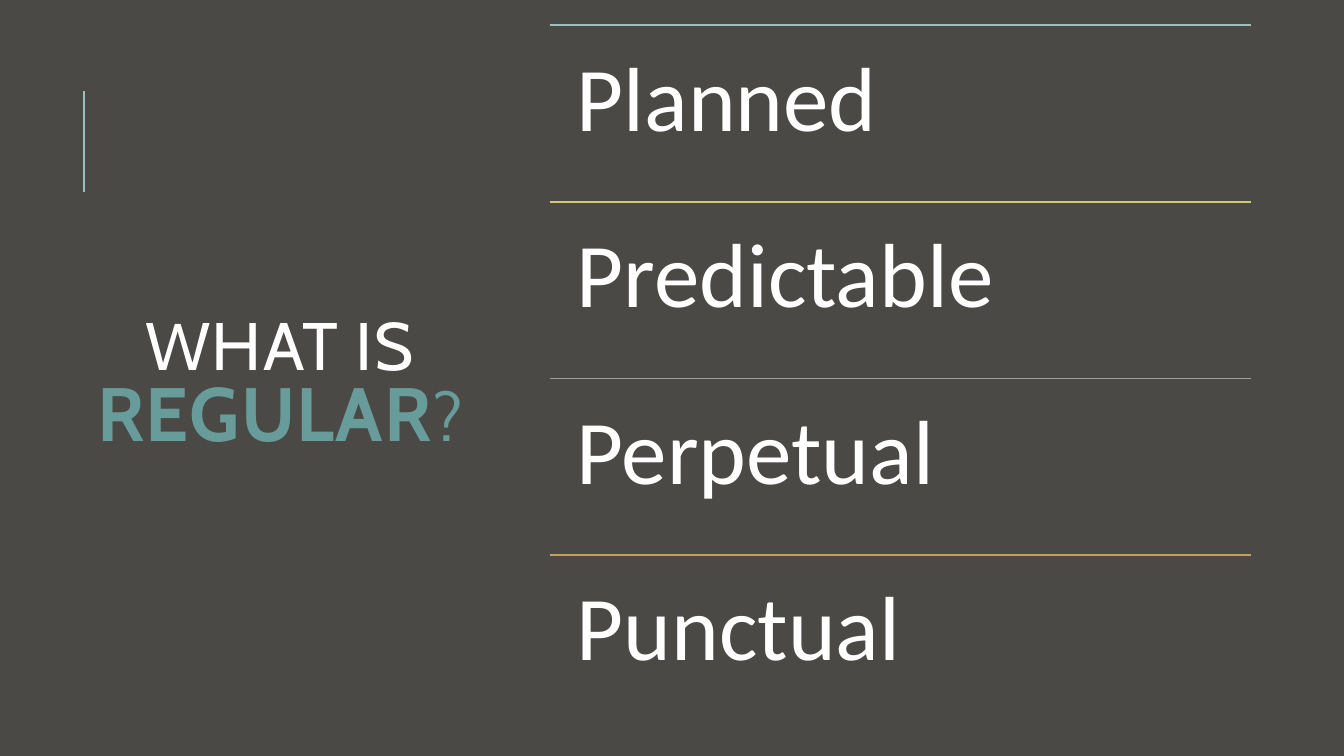
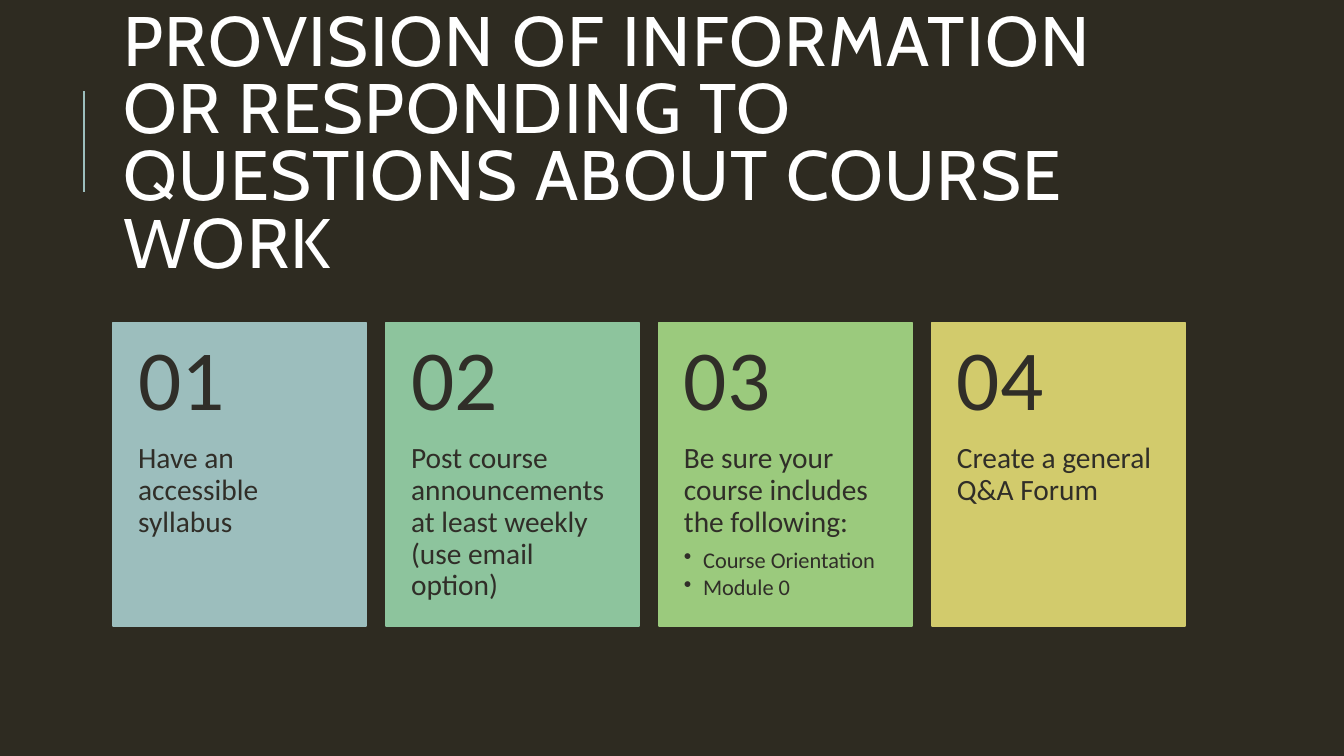
import pptx
import pptx.util
import pptx.dml.color
import pptx.enum.shapes
import pptx.enum.text
import pptx.oxml.ns
import lxml.etree

Inches, Pt = pptx.util.Inches, pptx.util.Pt
ANCHOR, ALIGN = pptx.enum.text.MSO_ANCHOR, pptx.enum.text.PP_ALIGN
qn = pptx.oxml.ns.qn

# Content: title runs are (text, size, colour, bold)
WHITE, INK, TEAL, ACCENT = "FFFFFF", "302E28", "689C9A", "9CBEBD"
HEADING_FONT, BODY_FONT = "Cabin", "Calibri"

REGULAR_TITLE = [("WHAT IS ", 48, WHITE, False), ("REGULAR", 54, TEAL, True),
                 ("?", 48, TEAL, False)]
REGULAR_ROWS = [("Planned", ACCENT), ("Predictable", "D2CB6C"),
                ("Perpetual", "95A39D"), ("Punctual", "C89F5D")]

COURSE_TITLE = [("PROVISION OF INFORMATION OR RESPONDING TO QUESTIONS ABOUT "
                 "COURSE WORK", 50, WHITE, False)]
COURSE_CARDS = [
    ("Have an accessible syllabus", [], ACCENT),
    ("Post course announcements at least weekly (use email option)", [], "8DC49D"),
    ("Be sure your course includes the following:",
     ["Course Orientation", "Module 0"], "9BCA7D"),
    ("Create a general Q&A Forum", [], "D2CB6C"),
]


# Shared helpers
def rgb(color):
    return pptx.dml.color.RGBColor.from_string(color)


def add_line(s, x1, y1, x2, y2, color, width):
    line = s.shapes.add_connector(pptx.enum.shapes.MSO_CONNECTOR.STRAIGHT,
                                  Inches(x1), Inches(y1), Inches(x2), Inches(y2))
    line.line.color.rgb = rgb(color)
    line.line.width = Pt(width)
    lxml.etree.SubElement(line._element.spPr, qn("a:effectLst"))


def add_slide(prs, background, title_runs, box, align):
    s = prs.slides.add_slide(prs.slide_layouts[5])
    s.background.fill.solid()
    s.background.fill.fore_color.rgb = rgb(background)
    add_line(s, 0.83, 1.9, 0.83, 0.9, ACCENT, 1.5)

    title = s.shapes.title
    title.left, title.top, title.width, title.height = map(Inches, box)
    tf = title.text_frame
    tf.auto_size = pptx.enum.text.MSO_AUTO_SIZE.NONE
    tf.word_wrap = True
    tf.vertical_anchor = ANCHOR.MIDDLE
    p = tf.paragraphs[0]
    p.alignment, p.line_spacing = align, 0.8
    p.font.name = HEADING_FONT
    for text, size, color, bold in title_runs:
        r = p.add_run()
        r.text = text
        r.font.name = HEADING_FONT
        r.font.size, r.font.bold = Pt(size), bold
        r.font.color.rgb = rgb(color)
        r.font._element.set("spc", "100")
    return s


def style_paragraph(p, text, size, color, after=0.35):
    p.text = text
    p.line_spacing, p.space_after = 0.9, Pt(round(size * after, 1))
    p.font.name, p.font.size = BODY_FONT, Pt(size)
    p.font.color.rgb = rgb(color)


def add_text(s, box, insets, text, size, color, anchor=ANCHOR.TOP):
    tf = s.shapes.add_textbox(*map(Inches, box)).text_frame
    tf.word_wrap = True
    tf.vertical_anchor = anchor
    (tf.margin_left, tf.margin_top,
     tf.margin_right, tf.margin_bottom) = map(Inches, insets)
    style_paragraph(tf.paragraphs[0], text, size, color)
    return tf


def add_bullet(tf, text):
    p = tf.add_paragraph()
    style_paragraph(p, text, 16, INK, after=0.15)
    p.level = 1
    pPr = p._p.get_or_add_pPr()
    pPr.set("marL", str(Inches(0.19)))
    pPr.set("indent", str(-Inches(0.19)))
    bullet = lxml.etree.Element(qn("a:buChar"), char="•")
    pPr.find(qn("a:defRPr")).addprevious(bullet)


# Slides
def build_regular(prs):
    s = add_slide(prs, "4B4945", REGULAR_TITLE, (0.86, 0.92, 3.84, 5.84), ALIGN.CENTER)
    left, top, width, total = 5.45, 0.25, 6.96, 7.01
    row_height = total / len(REGULAR_ROWS)
    for i, (word, color) in enumerate(REGULAR_ROWS):
        y = top + i * row_height
        add_line(s, left, y, left + width, y, color, 1.25)
        add_text(s, (left, y, width, row_height), [0.27] * 4, word, 65, WHITE)


def build_course(prs):
    left, width = 1.12, 10.63
    s = add_slide(prs, "2E2B21", COURSE_TITLE, (left, 0.64, width, 1.64), ALIGN.LEFT)
    top, card_width, card_height, number_height = 3.2, 2.51, 3.01, 1.2
    pitch = (width - card_width) / (len(COURSE_CARDS) - 1)
    for i, (text, bullets, color) in enumerate(COURSE_CARDS):
        x = left + i * pitch
        card = s.shapes.add_shape(pptx.enum.shapes.MSO_SHAPE.RECTANGLE,
                                  *map(Inches, (x, top, card_width, card_height)))
        card.shadow.inherit = False
        card.fill.solid()
        card.fill.fore_color.rgb = card.line.color.rgb = rgb(color)
        card.line.width = Pt(1.25)
        tf = add_text(s, (x, top + number_height, card_width, card_height - number_height),
                      (0.25, 0, 0.25, 0.36), text, 21, INK)
        for bullet in bullets:
            add_bullet(tf, bullet)
        add_text(s, (x, top, card_width, number_height), (0.25, 0.18, 0.25, 0.18),
                 f"{i + 1:02d}", 61, INK, ANCHOR.MIDDLE)


def main():
    prs = pptx.Presentation()
    prs.slide_width, prs.slide_height = Inches(13.33), Inches(7.5)
    build_regular(prs)
    build_course(prs)
    prs.save("out.pptx")


if __name__ == "__main__":
    main()
